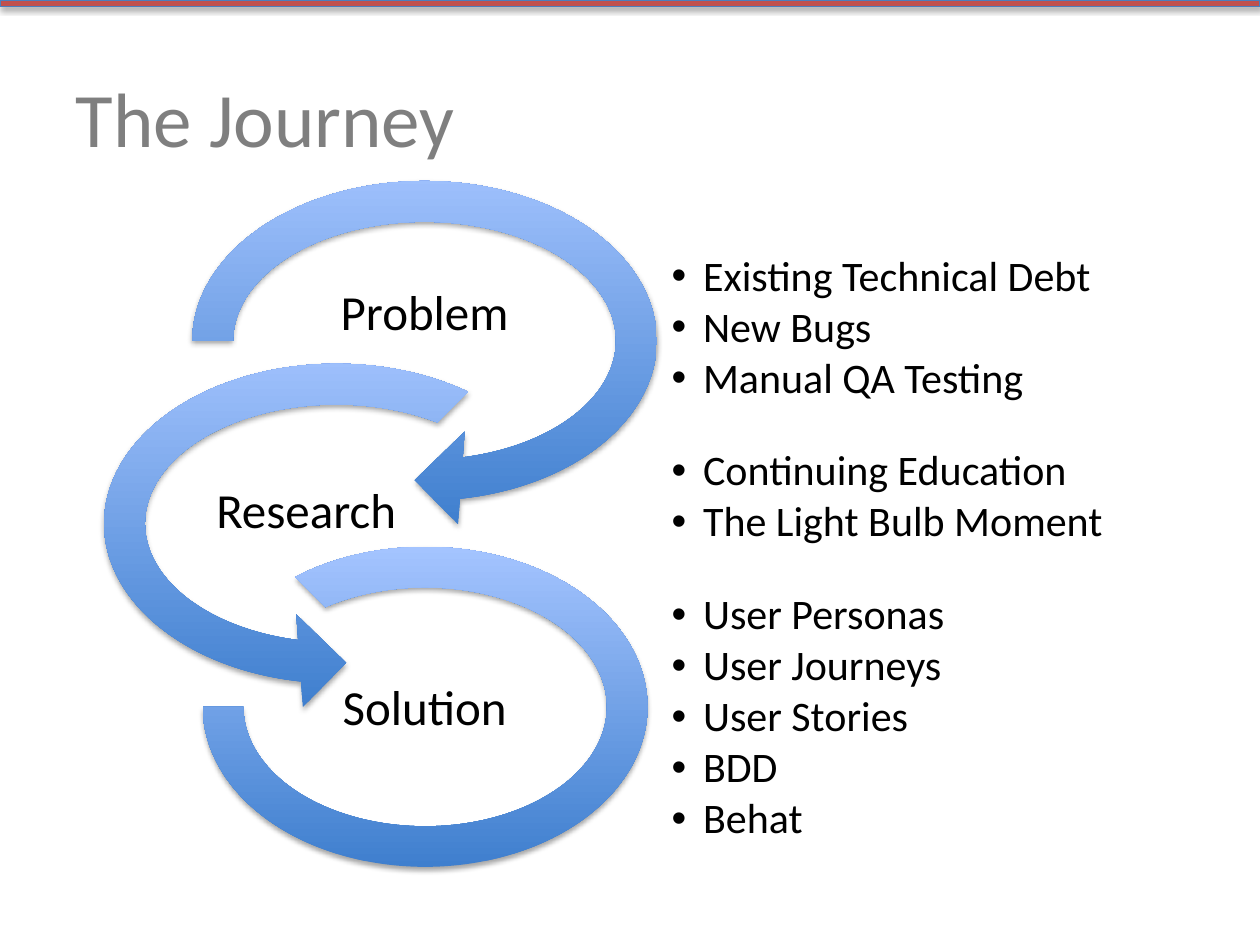
from dataclasses import dataclass

from lxml.etree import SubElement
from pptx import Presentation
from pptx.dml.color import RGBColor
from pptx.enum.shapes import MSO_SHAPE
from pptx.enum.text import MSO_ANCHOR, MSO_AUTO_SIZE, PP_ALIGN
from pptx.oxml.ns import qn
from pptx.shapes.autoshape import Shape
from pptx.slide import Slide
from pptx.text.text import TextFrame
from pptx.util import Inches, Pt


@dataclass(frozen=True)
class Theme:
    font: str = "Calibri"
    title: int = 44
    label: int = 28
    bullet: int = 24
    ink: str = "000000"
    gray: str = "7F7F7F"
    red: str = "C0504D"
    edge: str = "4B7EBC"
    deep: str = "3F7FCE"
    pale: str = "A4C4FF"


@dataclass(frozen=True)
class Box:
    left: float
    top: float
    width: float
    height: float

    def spans(self) -> list[int]:
        return [Inches(n) for n in (self.left, self.top, self.width, self.height)]


@dataclass(frozen=True)
class Stage:
    name: str
    label: Box
    kind: MSO_SHAPE
    curve: Box
    bends: tuple[float, ...]
    slot: int
    top: float
    points: tuple[str, ...]


THEME = Theme()
STAGES = (
    Stage("Problem", Box(2.37, 2.15, 2, 0.7),
          MSO_SHAPE.CIRCULAR_ARROW, Box(1.32, 1.23, 4.1, 2.95),
          (0.11, 11.423, 45, 108, 0.125), 1, 1.63,
          ("Existing Technical Debt", "New Bugs", "Manual QA Testing")),
    Stage("Research", Box(1.43, 3.72, 2, 0.7),
          MSO_SHAPE.LEFT_CIRCULAR_ARROW, Box(0.62, 2.68, 4.1, 2.95),
          (0.11, 11.423, 63, 189, 0.125), 2, 2.97,
          ("Continuing Education", "The Light Bulb Moment")),
    Stage("Solution", Box(2.37, 5.28, 2, 0.7),
          MSO_SHAPE.BLOCK_ARC, Box(1.61, 4.34, 3.53, 2.54),
          (135, 108, 0.127), 4, 4.72,
          ("User Personas", "User Journeys", "User Stories", "BDD", "Behat")),
)


def color(code: str) -> RGBColor:
    return RGBColor.from_string(code)


def place(shape: Shape, box: Box) -> None:
    shape.left, shape.top, shape.width, shape.height = box.spans()


def shade(shape: Shape) -> None:
    """Give the shape a soft shadow that falls straight down."""
    shape.shadow.inherit = False
    effects = shape._element.spPr.find(qn("a:effectLst"))
    outer = SubElement(effects, qn("a:outerShdw"), blurRad=str(Pt(3.1)),
                       dist=str(Pt(1.8)), dir="5400000", rotWithShape="0")
    black = SubElement(outer, qn("a:srgbClr"), val=THEME.ink)
    SubElement(black, qn("a:alpha"), val="35000")


def style(frame: TextFrame, size: int, ink: str) -> None:
    frame.word_wrap = True
    frame.auto_size = MSO_AUTO_SIZE.NONE
    frame.vertical_anchor = MSO_ANCHOR.MIDDLE
    for para in frame.paragraphs:
        for run in para.runs:
            font = run.font
            font.name, font.size, font.bold = THEME.font, Pt(size), False
            font.color.rgb = color(ink)


def inset(frame: TextFrame) -> None:
    frame.margin_left = frame.margin_right = Inches(0.02)
    frame.margin_top = frame.margin_bottom = Inches(0.02)


def draw_bar(slide: Slide) -> None:
    bar = slide.shapes.add_shape(MSO_SHAPE.RECTANGLE, *Box(0, 0, 10, 0.05).spans())
    bar.fill.solid()
    bar.fill.fore_color.rgb = color(THEME.red)
    bar.line.color.rgb = color(THEME.edge)
    bar.line.width = Pt(0.75)
    shade(bar)


def draw_title(slide: Slide, text: str) -> None:
    title = slide.shapes.title
    place(title, Box(0.5, 0.3, 9, 1.25))
    title.text_frame.text = text
    title.text_frame.paragraphs[0].alignment = PP_ALIGN.LEFT
    style(title.text_frame, THEME.title, THEME.gray)


def draw_curve(slide: Slide, stage: Stage) -> None:
    curve = slide.shapes.add_shape(stage.kind, *stage.curve.spans())
    for i, bend in enumerate(stage.bends):
        curve.adjustments[i] = bend
    curve.fill.gradient()
    curve.fill.gradient_angle = 90
    for stop, code in zip(curve.fill.gradient_stops, (THEME.deep, THEME.pale)):
        stop.color.rgb = color(code)
    curve.line.fill.background()
    shade(curve)


def draw_label(slide: Slide, stage: Stage) -> None:
    frame = slide.shapes.add_textbox(*stage.label.spans()).text_frame
    frame.text = stage.name
    para = frame.paragraphs[0]
    para.alignment, para.line_spacing = PP_ALIGN.CENTER, 0.9
    inset(frame)
    style(frame, THEME.label, THEME.ink)


def draw_list(slide: Slide, stage: Stage) -> None:
    body = slide.placeholders[stage.slot]
    place(body, Box(5.31, stage.top, 4.19, 1.96))
    frame = body.text_frame
    frame.text = "\n".join(stage.points)
    for para in frame.paragraphs:
        para.level = 1
        para.line_spacing = 0.9
        para.space_before, para.space_after = Pt(0), Pt(3.2)
        props = para._p.get_or_add_pPr()
        props.set("marL", str(Inches(0.25)))
        props.set("indent", str(-Inches(0.25)))
        SubElement(props, qn("a:buFont"), typeface="Arial")
        SubElement(props, qn("a:buChar"), char="•")
    inset(frame)
    style(frame, THEME.bullet, THEME.ink)


def main() -> None:
    deck = Presentation()
    deck.slide_width, deck.slide_height = Inches(10), Inches(7.5)
    slide = deck.slides.add_slide(deck.slide_layouts.get_by_name("Comparison"))
    draw_bar(slide)
    draw_title(slide, "The Journey")
    for stage in STAGES:
        draw_curve(slide, stage)
        draw_list(slide, stage)
        draw_label(slide, stage)
    for spare in list(slide.placeholders):
        if not spare.text_frame.text:
            spare._element.getparent().remove(spare._element)
    deck.save("out.pptx")


if __name__ == "__main__":
    main()
